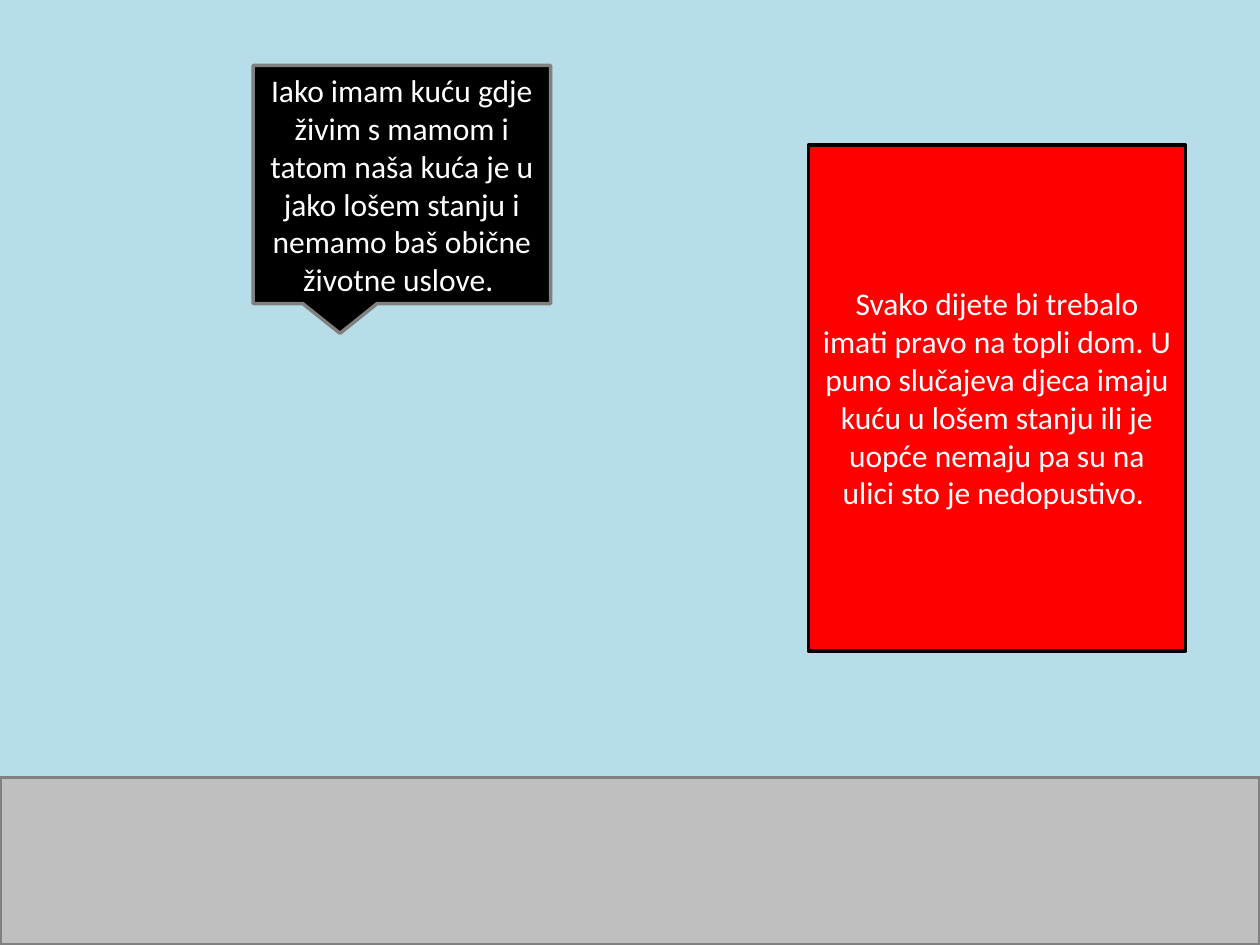
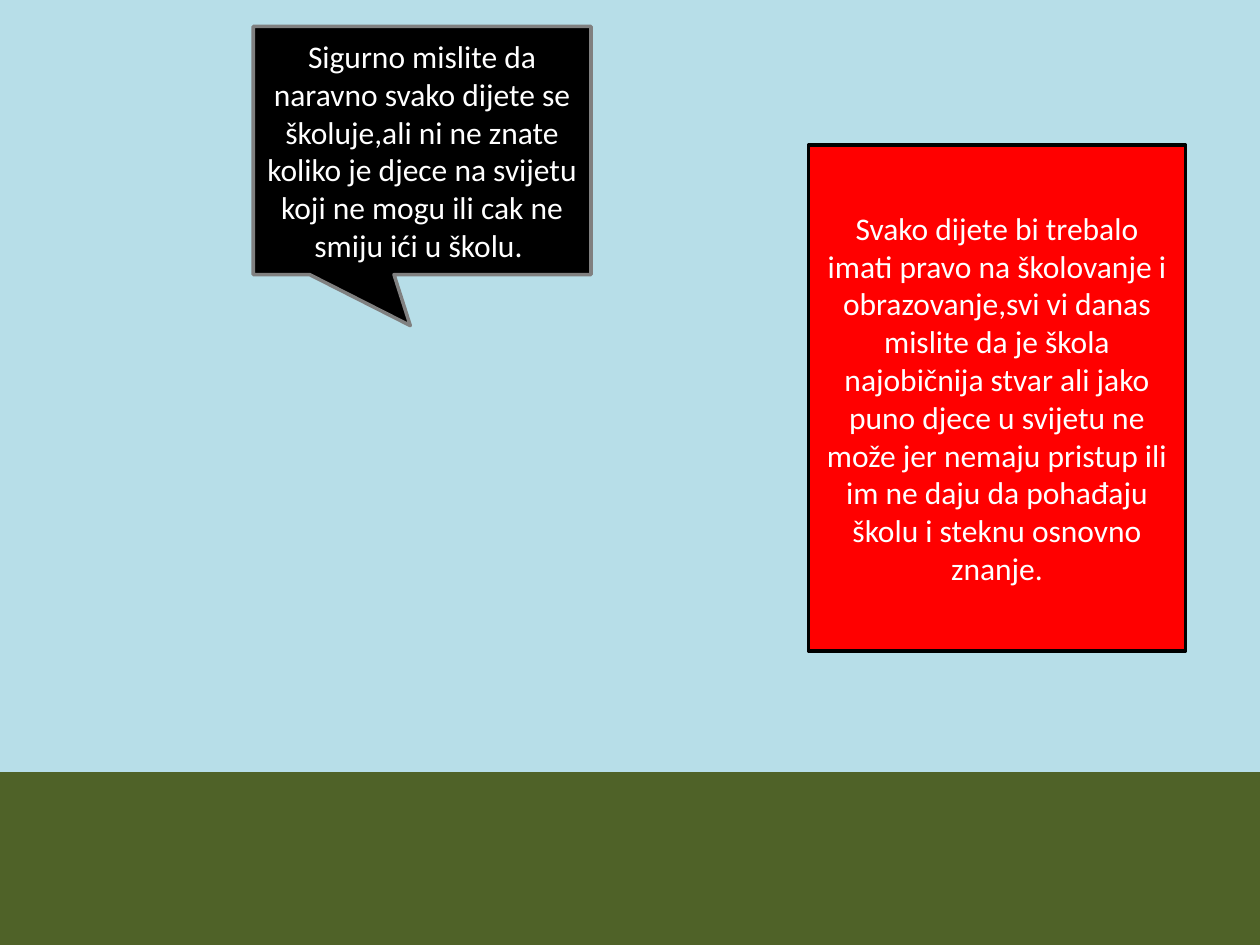
"""Build two scenes on children's rights, each with a speech bubble and a red card."""
from dataclasses import dataclass

from pptx import Presentation
from pptx.dml.color import RGBColor
from pptx.enum.shapes import MSO_SHAPE
from pptx.enum.text import MSO_ANCHOR, PP_ALIGN
from pptx.util import Pt

RECTANGLE = MSO_SHAPE.RECTANGLE
CALLOUT = MSO_SHAPE.RECTANGULAR_CALLOUT
MIDDLE = MSO_ANCHOR.MIDDLE
CENTER = PP_ALIGN.CENTER

SCENES = [
    {
        "ground_top": 444.2,
        "ground": ("BFBFBF", "808080"),
        "bubble_area": (144.7, 37.4, 169.9, 136.1),
        "bubble_tip": (-0.208, 0.625),
        "bubble": "Iako imam kuću gdje živim s mamom i tatom naša kuća je u jako "
                  "lošem stanju i nemamo baš obične životne uslove. ",
        "card": "Svako dijete bi trebalo imati pravo na topli dom. U puno slučajeva "
                "djeca imaju kuću u lošem stanju ili je uopće nemaju pa su na ulici "
                "sto je nedopustivo. ",
    },
    {
        "ground_top": 442.1,
        "ground": ("4F6228", "4F6228"),
        "bubble_area": (144.7, 15.1, 193, 141.8),
        "bubble_tip": (-0.035, 0.706),
        "bubble": "Sigurno mislite da naravno svako dijete se školuje,ali ni ne znate "
                  "koliko je djece na svijetu koji ne mogu ili cak ne smiju ići u školu. ",
        "card": "Svako dijete bi trebalo imati pravo na školovanje i obrazovanje,svi vi "
                "danas mislite da je škola najobičnija stvar ali jako puno djece u "
                "svijetu ne može jer nemaju pristup ili im ne daju da pohađaju školu i "
                "steknu osnovno znanje.",
    },
]

PAGE_WIDTH, PAGE_HEIGHT = 720, 540
CARD_AREA = (462, 82.8, 215.5, 289.2)


@dataclass(frozen=True)
class Theme:
    """Colours and type sizes of the deck."""
    sky: tuple = ("B7DEE8", "B7DEE8")
    bubble: tuple = ("000000", "808080")
    card: tuple = ("FF0000", "000000")
    text: str = "FFFFFF"
    font: str = "Calibri"
    text_size: float = 18
    line_width: float = 2


THEME = Theme()


def add_box(page, area, colours, kind=RECTANGLE):
    """Add a filled, outlined shape and return it."""
    fill, outline = colours
    box = page.shapes.add_shape(kind, *map(Pt, area))
    box.shadow.inherit = False
    box.fill.solid()
    box.fill.fore_color.rgb = RGBColor.from_string(fill)
    box.line.color.rgb = RGBColor.from_string(outline)
    box.line.width = Pt(THEME.line_width)
    return box


def write(box, text, *, size=THEME.text_size, colour=THEME.text, align=CENTER, anchor=MIDDLE):
    """Write one formatted paragraph into a box."""
    frame = box.text_frame
    frame.word_wrap = True
    frame.vertical_anchor = anchor
    para = frame.paragraphs[0]
    para.alignment = align
    span = para.add_run()
    span.text = text
    span.font.name = THEME.font
    span.font.size = Pt(size)
    span.font.color.rgb = RGBColor.from_string(colour)


def add_scene(deck, scene):
    """Add a page with sky, ground, speech bubble and card."""
    page = deck.slides.add_slide(deck.slide_layouts[6])
    horizon = scene["ground_top"]
    add_box(page, (0, 0, PAGE_WIDTH, horizon), THEME.sky)
    add_box(page, (0, horizon, PAGE_WIDTH, PAGE_HEIGHT - horizon), scene["ground"])
    bubble = add_box(page, scene["bubble_area"], THEME.bubble, CALLOUT)
    for index, offset in enumerate(scene["bubble_tip"]):
        bubble.adjustments[index] = offset
    write(bubble, scene["bubble"])
    write(add_box(page, CARD_AREA, THEME.card), scene["card"])


def main():
    """Build and save the deck."""
    deck = Presentation()
    deck.slide_width, deck.slide_height = Pt(PAGE_WIDTH), Pt(PAGE_HEIGHT)
    for scene in SCENES:
        add_scene(deck, scene)
    deck.save("out.pptx")


if __name__ == "__main__":
    main()
